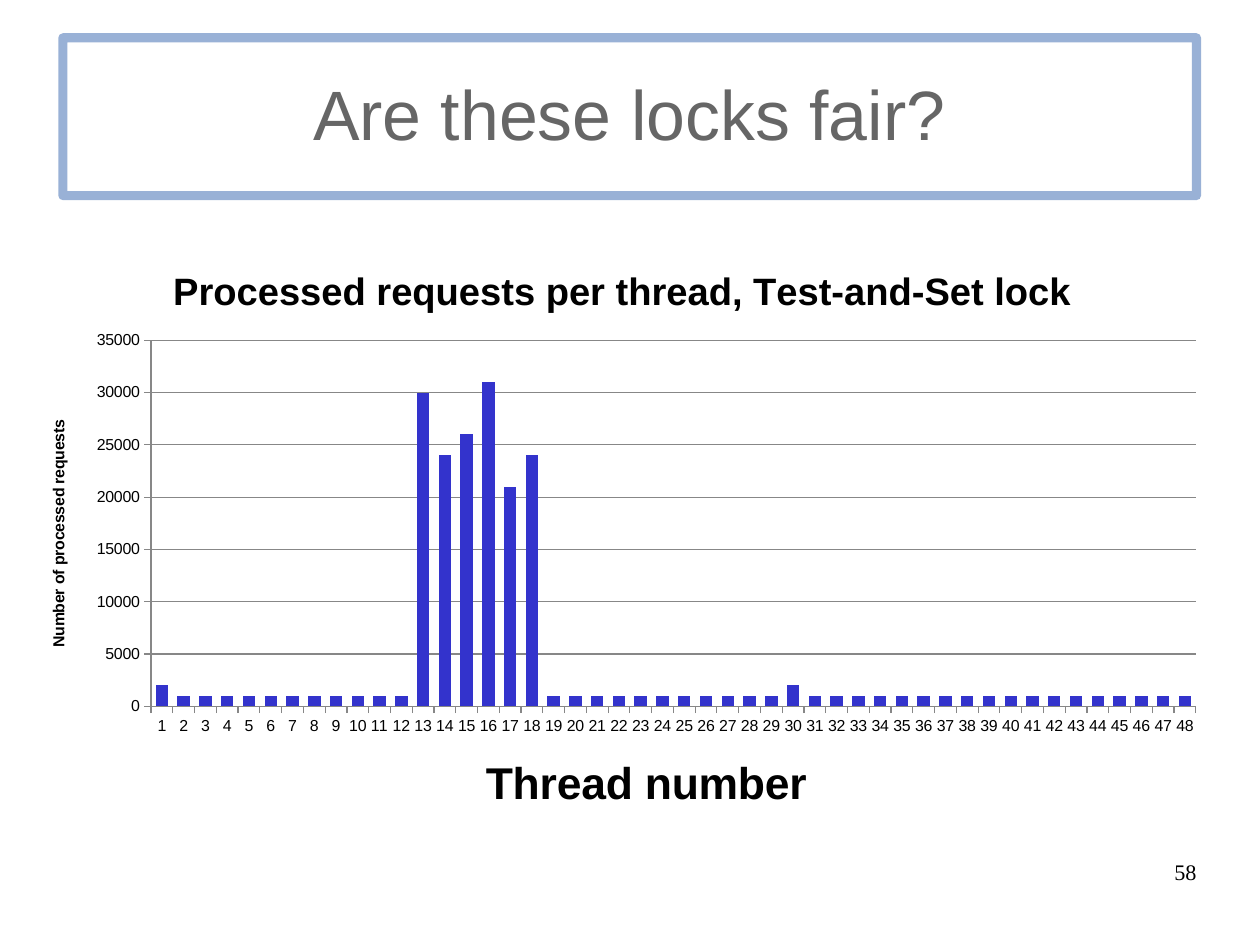
from dataclasses import dataclass

from lxml.etree import SubElement
from pptx import Presentation
from pptx.chart.chart import Chart
from pptx.chart.data import CategoryChartData
from pptx.dml.color import RGBColor
from pptx.enum.chart import XL_CHART_TYPE as ChartType, XL_TICK_MARK as TickMark
from pptx.enum.shapes import MSO_SHAPE as Preset
from pptx.enum.text import MSO_ANCHOR as Anchor, PP_ALIGN as Align
from pptx.oxml import parse_xml
from pptx.oxml.ns import nsdecls, qn
from pptx.util import Pt

COLORS = {
    "frame": "3465AF",
    "heading": "666666",
    "text": "000000",
    "bar": "3333CC",
    "grid": "878787",
}
CHART_WIDTH, CHART_HEIGHT = 752.4, 375.1
REQUESTS = (
    [2000] + [1000] * 11
    + [30000, 24000, 26000, 31000, 21000, 24000]
    + [1000] * 11 + [2000] + [1000] * 18
)


@dataclass
class Label:
    """A rectangle of text; lengths and size in points."""
    text: str
    left: float
    top: float
    width: float
    height: float
    size: float
    font: str
    color: str
    align: Align
    anchor: Anchor
    spacing: float
    framed: bool = False


@dataclass
class ChartTitle:
    """A title with its corner in points from the corner of the chart."""
    owner: object
    text: str
    size: float
    left: float
    top: float


LABELS = [
    Label("Are these locks fair?", 39.6, 23.8, 714.2, 99.4, 44, "Arial",
          "heading", Align.CENTER, Anchor.MIDDLE, 0.94, framed=True),
    Label("58", 568.8, 542.2, 185, 41, 14, "Times New Roman",
          "text", Align.RIGHT, Anchor.TOP, 0.93),
]


def rgb(name: str) -> RGBColor:
    return RGBColor.from_string(COLORS[name])


def style_font(font, size: float, face: str, color: str, bold: bool = False) -> None:
    font.size = Pt(size)
    font.name = face
    font.bold = bold
    font.color.rgb = rgb(color)


def draw_label(page, label: Label) -> None:
    area = [Pt(v) for v in (label.left, label.top, label.width, label.height)]
    if label.framed:
        box = page.shapes.add_shape(Preset.RECTANGLE, *area)
        box.shadow.inherit = False
        box.fill.background()
        box.line.width = Pt(5.75)
        box.line.color.rgb = rgb("frame")
        line = box.element.spPr.find(qn("a:ln"))
        SubElement(line.find(".//" + qn("a:srgbClr")), qn("a:alpha"), val="50000")
        SubElement(line, qn("a:round"))
    else:
        box = page.shapes.add_textbox(*area)
    frame = box.text_frame
    frame.word_wrap = True
    frame.vertical_anchor = label.anchor
    frame.margin_left = frame.margin_top = 0
    frame.margin_right = frame.margin_bottom = 0
    frame.text = label.text
    para = frame.paragraphs[0]
    para.alignment = label.align
    para.line_spacing = label.spacing
    style_font(para.runs[0].font, label.size, label.font, label.color)


def set_layout(parent, index: int, target: str = "", **lengths: float) -> None:
    """Place a chart part by lengths in points within the chart."""
    old = parent.find(qn("c:layout"))
    if old is not None:
        parent.remove(old)
    layout = parse_xml(f"<c:layout {nsdecls('c')}><c:manualLayout/></c:layout>")
    manual = layout[0]
    if target:
        SubElement(manual, qn("c:layoutTarget"), val=target)
    for side in ("x", "y"):
        SubElement(manual, qn(f"c:{side}Mode"), val="edge")
    for side, length in lengths.items():
        whole = CHART_WIDTH if side in "xw" else CHART_HEIGHT
        SubElement(manual, qn(f"c:{side}"), val=f"{length / whole:.4f}")
    parent.insert(index, layout)


def draw_chart_title(title: ChartTitle) -> None:
    frame = title.owner.text_frame
    frame.text = title.text
    style_font(frame.paragraphs[0].runs[0].font, title.size, "Arial", "text", True)
    set_layout(title.owner.element, 1, x=title.left, y=title.top)


def style_axis(axis) -> None:
    axis.major_tick_mark = TickMark.OUTSIDE
    axis.minor_tick_mark = TickMark.NONE
    axis.format.line.color.rgb = rgb("grid")
    style_font(axis.tick_labels.font, 10, "Arial", "text")


def draw_chart(page) -> Chart:
    data = CategoryChartData()
    data.categories = [str(n) for n in range(1, len(REQUESTS) + 1)]
    data.add_series("Series 1", REQUESTS)
    chart = page.shapes.add_chart(
        ChartType.COLUMN_CLUSTERED, Pt(15.8), Pt(155.5),
        Pt(CHART_WIDTH), Pt(CHART_HEIGHT), data,
    ).chart
    chart.has_legend = False
    style_font(chart.font, 10, "Arial", "text")

    plot = chart.plots[0]
    plot.gap_width = 75
    plot.vary_by_categories = False
    bars = plot.series[0].format.fill
    bars.solid()
    bars.fore_color.rgb = rgb("bar")

    threads, requests = chart.category_axis, chart.value_axis
    for axis in (threads, requests):
        style_axis(axis)
    requests.minimum_scale, requests.maximum_scale = 0, 35000
    requests.major_unit = 5000
    requests.has_major_gridlines = True
    requests.major_gridlines.format.line.color.rgb = rgb("grid")

    for title in (
        ChartTitle(chart.chart_title,
                   "Processed requests per thread, Test-and-Set lock", 24, 89, 8),
        ChartTitle(threads.axis_title, "Thread number", 28, 285.2, 315),
        ChartTitle(requests.axis_title, "Number of processed requests", 10, 12.8, 107),
    ):
        draw_chart_title(title)
    body = requests.axis_title.element.find(".//" + qn("a:bodyPr"))
    body.set("rot", "-5400000")
    body.set("vert", "horz")
    plot_area = chart.element.find(".//" + qn("c:plotArea"))
    set_layout(plot_area, 0, "inner", x=79.4, y=58.9, w=658.2, h=230.6)
    return chart


def main() -> None:
    deck = Presentation()
    deck.slide_width, deck.slide_height = Pt(793.75), Pt(595.25)
    page = deck.slides.add_slide(deck.slide_layouts[6])
    heading, page_number = LABELS
    draw_label(page, heading)
    draw_chart(page)
    draw_label(page, page_number)
    deck.save("out.pptx")


if __name__ == "__main__":
    main()
